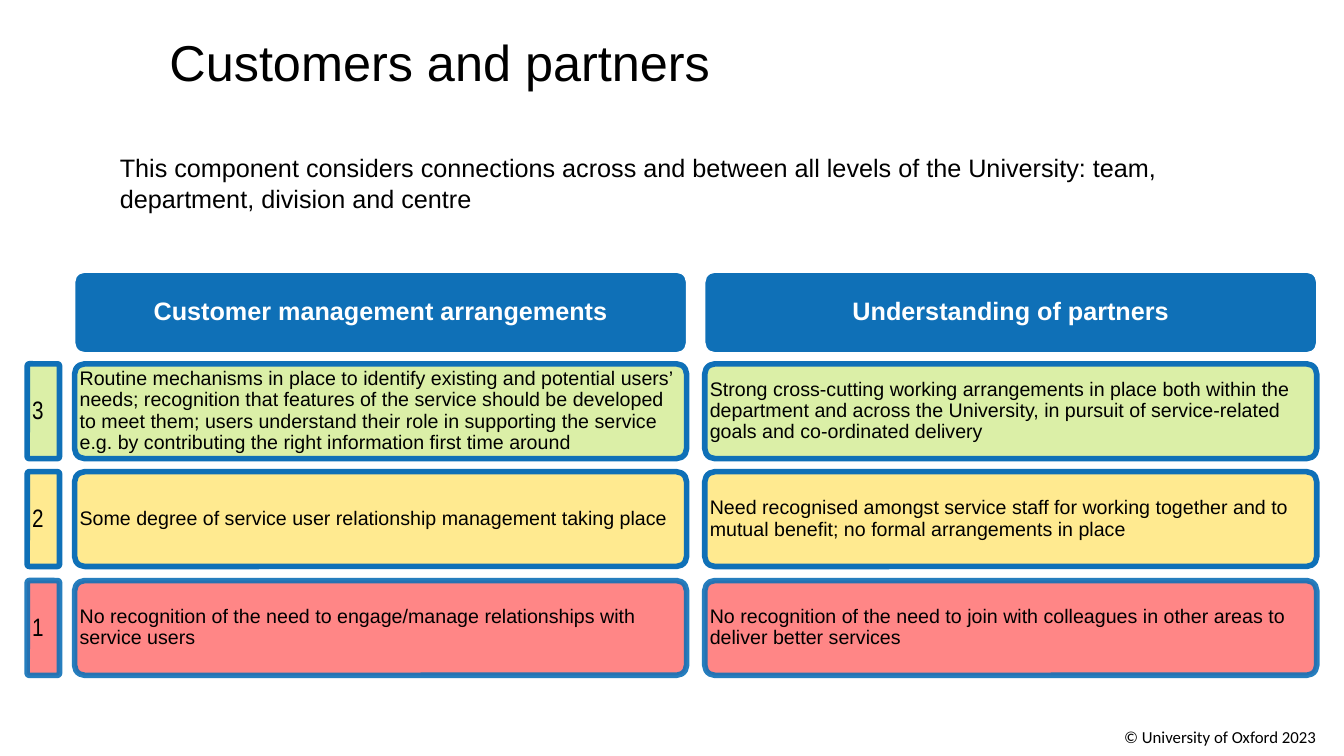
from dataclasses import dataclass

from lxml.etree import SubElement
from pptx import Presentation
from pptx.dml.color import RGBColor
from pptx.enum.shapes import MSO_SHAPE as Preset
from pptx.enum.text import MSO_ANCHOR as Anchor, MSO_AUTO_SIZE as AutoSize, PP_ALIGN as Align
from pptx.oxml.ns import qn
from pptx.util import Emu, Pt

BLUE, WHITE, BLACK = "0F70B7", "FFFFFF", "000000"
CARD_WIDTH, CARD_HEIGHT, CARD_RADIUS = 607, 94, 10
NUMBER_LEFT, NUMBER_WIDTH, NUMBER_RADIUS = 27, 32, 2
HEADER_TOP, HEADER_HEIGHT = 270, 80
LEVELS_TOP, LEVEL_PITCH = 361, 107.5
TEXT_MARGIN = 5


@dataclass(frozen=True)
class Level:
    number: str
    colour: str
    line_opacity: int = 100


@dataclass(frozen=True)
class Theme:
    left: int
    heading: str
    descriptions: tuple[str, ...]


@dataclass(frozen=True)
class TextStyle:
    size: int
    font: str = "Arial"
    colour: str = BLACK
    bold: bool = False
    align: Align = Align.LEFT
    anchor: Anchor = Anchor.MIDDLE
    spacing: float = 1.0


@dataclass(frozen=True)
class Panel:
    left: int
    top: int
    width: int
    height: int
    radius: int
    fill: str
    line: str = BLUE
    line_width: int = 4
    fill_opacity: int = 90
    line_opacity: int = 100


LEVELS = (Level("3", "D8EE9E"), Level("2", "FFE885"), Level("1", "FF7979", 90))
THEMES = (
    Theme(74, "Customer management arrangements", (
        "Routine mechanisms in place to identify existing and potential users’ needs; "
        "recognition that features of the service should be developed to meet them; "
        "users understand their role in supporting the service e.g. by contributing "
        "the right information first time around",
        "Some degree of service user relationship management taking place",
        "No recognition of the need to engage/manage relationships with service users",
    )),
    Theme(699, "Understanding of partners", (
        "Strong cross-cutting working arrangements in place both within the department "
        "and across the University, in pursuit of service-related goals and "
        "co-ordinated delivery",
        "Need recognised amongst service staff for working together and to mutual "
        "benefit; no formal arrangements in place",
        "No recognition of the need to join with colleagues in other areas to deliver "
        "better services",
    )),
)

TITLE = TextStyle(36, anchor=Anchor.TOP)
INTRO = TextStyle(18)
HEADING = TextStyle(18, colour=WHITE, bold=True, align=Align.CENTER, spacing=0.9)
NUMBER = TextStyle(18, font="Arial Narrow", spacing=0.9)
DESCRIPTION = TextStyle(14, spacing=0.9)
COPYRIGHT = TextStyle(12, font="Calibri", anchor=Anchor.TOP)


def px(length: float) -> Emu:
    """One px is a hundredth of an inch."""
    return Emu(round(length * 9144))


def paint(fill, colour: str, opacity: int = 100) -> None:
    fill.solid()
    fill.fore_color.rgb = RGBColor.from_string(colour)
    if opacity < 100:
        solid = fill._xPr.find(qn("a:solidFill"))
        SubElement(solid[0], qn("a:alpha"), val=str(opacity * 1000))


def write(shape, text: str, style: TextStyle, wrap: bool = True) -> None:
    frame = shape.text_frame
    frame.text = text
    frame.word_wrap = wrap
    frame.auto_size = AutoSize.NONE
    frame.vertical_anchor = style.anchor
    para = frame.paragraphs[0]
    para.alignment = style.align
    para.line_spacing = style.spacing
    for span in para.runs:
        span.font.name = style.font
        span.font.size = Pt(style.size)
        span.font.bold = style.bold
        paint(span.font.fill, style.colour)


def add_panel(page, panel: Panel, text: str, style: TextStyle) -> None:
    box = page.shapes.add_shape(Preset.ROUNDED_RECTANGLE, px(panel.left), px(panel.top),
                                px(panel.width), px(panel.height))
    box.adjustments[0] = panel.radius / min(panel.width, panel.height)
    box.shadow.inherit = False
    paint(box.fill, panel.fill, panel.fill_opacity)
    box.line.width = Pt(panel.line_width)
    paint(box.line.fill, panel.line, panel.line_opacity)
    write(box, text, style)
    # Rounded corners already push the text in by 0.29 of the radius
    frame = box.text_frame
    frame.margin_left = frame.margin_right = px(TEXT_MARGIN - 0.29 * panel.radius)
    frame.margin_top = frame.margin_bottom = px(2)


def add_text(page, left: int, top: int, width: int, height: int,
             text: str, style: TextStyle, wrap: bool = True) -> None:
    box = page.shapes.add_textbox(px(left), px(top), px(width), px(height))
    write(box, text, style, wrap)


def main() -> None:
    deck = Presentation()
    deck.slide_width, deck.slide_height = px(1333), px(750)
    page = deck.slides.add_slide(deck.slide_layouts[5])

    # Title and introduction
    title = page.shapes.title
    title.left, title.top, title.width, title.height = px(158), px(26), px(900), px(71)
    write(title, "Customers and partners", TITLE)
    add_text(page, 109, 146, 1183, 71,
             "This component considers connections across and between all levels of the "
             "University: team, department, division and centre", INTRO)

    # Column headings
    for theme in THEMES:
        header = Panel(theme.left, HEADER_TOP, CARD_WIDTH, HEADER_HEIGHT, CARD_RADIUS,
                       BLUE, line=WHITE, line_width=1, fill_opacity=100)
        add_panel(page, header, theme.heading, HEADING)

    # Maturity levels: a number, then one card for each theme
    for row, level in enumerate(LEVELS):
        top = int(LEVELS_TOP + row * LEVEL_PITCH)
        number = Panel(NUMBER_LEFT, top, NUMBER_WIDTH, CARD_HEIGHT, NUMBER_RADIUS,
                       level.colour, line_opacity=level.line_opacity)
        add_panel(page, number, level.number, NUMBER)
        for theme in THEMES:
            card = Panel(theme.left, top, CARD_WIDTH, CARD_HEIGHT, CARD_RADIUS,
                         level.colour, line_opacity=level.line_opacity)
            add_panel(page, card, theme.descriptions[row], DESCRIPTION)

    # Copyright line
    add_text(page, 1105, 716, 229, 30, "© University of Oxford 2023", COPYRIGHT, wrap=False)

    deck.save("out.pptx")


if __name__ == "__main__":
    main()
